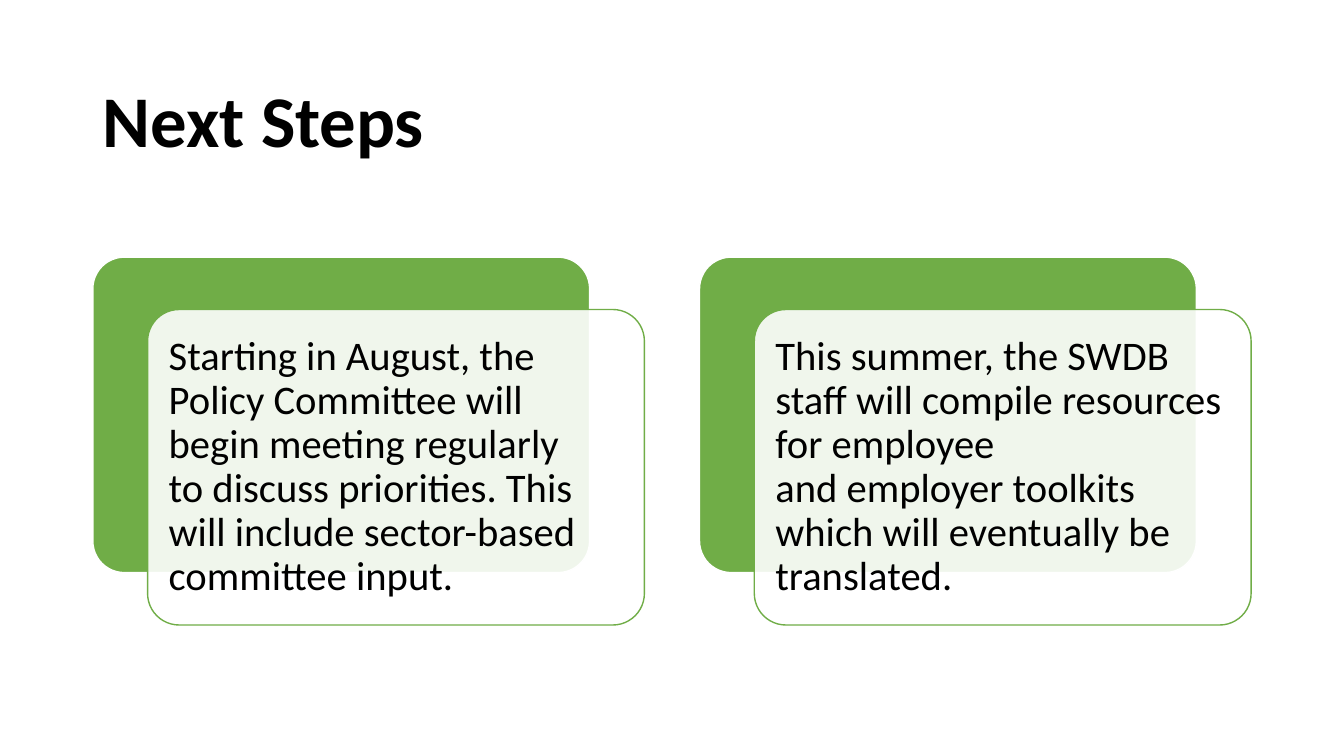
import pptx
import pptx.util
import pptx.dml.color
import pptx.enum.shapes
import pptx.enum.text
import pptx.oxml.ns
from dataclasses import dataclass
from lxml import etree

Cm, Pt = pptx.util.Cm, pptx.util.Pt
RGB = pptx.dml.color.RGBColor.from_string


@dataclass(frozen=True)
class Theme:
    font: str = "Calibri"
    text: str = "000000"
    green: str = "70AD47"
    white: str = "FFFFFF"
    title_size: int = 52
    body_size: int = 29


theme = Theme()
nbsp = chr(160)  # keeps two words on one line

prs = pptx.Presentation()
prs.slide_width, prs.slide_height = Cm(33.87), Cm(19.05)
s = prs.slides.add_slide(prs.slide_layouts[6])


def write(sp, text, size, bold=False):
    tf = sp.text_frame
    tf.word_wrap = True
    tf.vertical_anchor = pptx.enum.text.MSO_ANCHOR.MIDDLE
    p = tf.paragraphs[0]
    p.alignment = pptx.enum.text.PP_ALIGN.LEFT
    p.line_spacing = 0.9
    r = p.add_run()
    r.text = text
    r.font.name, r.font.size, r.font.bold = theme.font, Pt(size), bold
    r.font.color.rgb = RGB(theme.text)
    return tf


def add_panel(left, top, fill, line):
    sp = s.shapes.add_shape(pptx.enum.shapes.MSO_SHAPE.ROUNDED_RECTANGLE,
                            Cm(left), Cm(top), Cm(12.52), Cm(7.95))
    sp.adjustments[0] = 0.1
    sp.shadow.inherit = False
    sp.fill.solid()
    sp.fill.fore_color.rgb = RGB(fill)
    sp.line.color.rgb = RGB(line)
    sp.line.width = Pt(1)
    return sp


# Title
title = s.shapes.add_textbox(Cm(2.34), Cm(1.55), Cm(29.21), Cm(3.15))
write(title, "Next Steps", theme.title_size, bold=True)

# Steps: a green panel with a translucent card offset over it
steps = [
    "Starting in August, the Policy Committee will begin meeting regularly "
    f"to{nbsp}discuss priorities. This will include sector-based committee input.",
    f"This summer,{nbsp}the{nbsp}SWDB staff will{nbsp}compile{nbsp}resources for employee "
    f"and{nbsp}employer toolkits which will eventually be translated.",
]
top = 6.48
for i, step in enumerate(steps):
    left = 2.34 + i * 15.29
    add_panel(left, top, theme.green, theme.white)
    card = add_panel(left + 1.38, top + 1.32, theme.white, theme.green)

    # Card fill at 90% opacity
    color = card.fill._xPr.find(".//" + pptx.oxml.ns.qn("a:srgbClr"))
    etree.SubElement(color, pptx.oxml.ns.qn("a:alpha"), val="90000")

    tf = write(card, step, theme.body_size)
    tf.margin_left = tf.margin_right = tf.margin_top = tf.margin_bottom = Cm(0.3)

prs.save("out.pptx")
